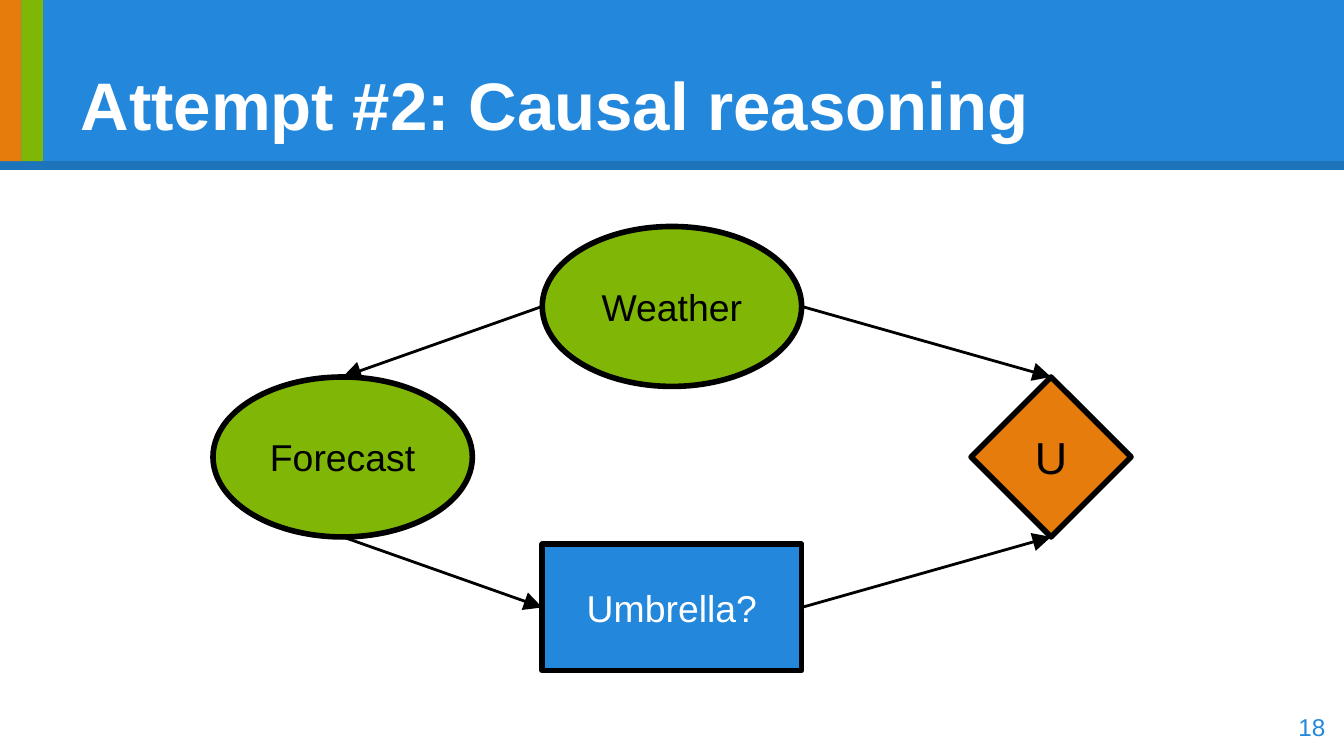
from lxml.etree import SubElement
from pptx import Presentation
from pptx.dml.color import RGBColor
from pptx.enum.shapes import MSO_CONNECTOR, MSO_SHAPE
from pptx.enum.text import MSO_ANCHOR, PP_ALIGN
from pptx.oxml.ns import qn
from pptx.util import Inches, Pt

BLUE = RGBColor(0x23, 0x88, 0xDB)
DARK_BLUE = RGBColor(0x1E, 0x74, 0xBA)
GREEN = RGBColor(0x80, 0xB6, 0x06)
ORANGE = RGBColor(0xE6, 0x7C, 0x0B)
BLACK = RGBColor(0, 0, 0)
WHITE = RGBColor(0xFF, 0xFF, 0xFF)

WIDTH = 10
HEIGHT = WIDTH * 9 / 16
HEADING = "Attempt #2: Causal reasoning"
PAGE_NUMBER = "18"
COLUMNS = {"left": 2.55, "middle": WIDTH / 2, "right": 7.82}
ROWS = {"top": 2.28, "centre": 3.4, "bottom": 4.52}
NODES = {
    "Weather": (MSO_SHAPE.OVAL, "middle", "top", 1.93, 1.19, GREEN, BLACK, 20),
    "U": (MSO_SHAPE.DIAMOND, "right", "centre", 1.19, 1.19, ORANGE, BLACK, 24),
    "Umbrella?": (MSO_SHAPE.RECTANGLE, "middle", "bottom", 1.93, 0.94, BLUE, WHITE, 20),
    "Forecast": (MSO_SHAPE.OVAL, "left", "centre", 1.93, 1.19, GREEN, BLACK, 20),
}
TOP, LEFT, BOTTOM, RIGHT = range(4)
ARROWS = [
    ("Weather", LEFT, "Forecast", TOP),
    ("Weather", RIGHT, "U", TOP),
    ("Forecast", BOTTOM, "Umbrella?", LEFT),
    ("Umbrella?", RIGHT, "U", BOTTOM),
]

deck = Presentation()
deck.slide_width, deck.slide_height = Inches(WIDTH), Inches(HEIGHT)
slide = deck.slides.add_slide(deck.slide_layouts[5])
shapes = slide.shapes


def box(left, top, width, height):
    return [Inches(value) for value in (left, top, width, height)]


def write(holder, text, size, color, align, anchor=MSO_ANCHOR.MIDDLE, bold=False):
    frame = holder.text_frame
    frame.word_wrap = True
    frame.vertical_anchor = anchor
    frame.margin_left = frame.margin_right = Inches(0.1)
    frame.margin_top = frame.margin_bottom = Inches(0.1)
    frame.text = text
    paragraph = frame.paragraphs[0]
    paragraph.alignment = align
    paragraph.font.name = "Arial"
    paragraph.font.size = Pt(size)
    paragraph.font.bold = bold
    paragraph.font.color.rgb = color


def add_filled(kind, area, fill, outlined=False):
    shape = shapes.add_shape(kind, *box(*area))
    shape.shadow.inherit = False
    shape.fill.solid()
    shape.fill.fore_color.rgb = fill
    if outlined:
        shape.line.color.rgb = BLACK
        shape.line.width = Pt(3)
    else:
        shape.line.fill.background()
    return shape


def add_line(start, end, color, width):
    line = shapes.add_connector(MSO_CONNECTOR.STRAIGHT, *start, *end)
    line.line.color.rgb = color
    line.line.width = Pt(width)
    SubElement(line._element.spPr, qn("a:effectLst"))
    return line


def side_point(node, side):
    across, down = [(1, 0), (0, 1), (1, 2), (2, 1)][side]
    return node.left + node.width * across // 2, node.top + node.height * down // 2


add_filled(MSO_SHAPE.RECTANGLE, (0, 0, WIDTH, 1.26), BLUE)
add_line((0, Inches(1.23)), (Inches(WIDTH), Inches(1.23)), DARK_BLUE, 4.5)
heading = shapes.title
heading.left, heading.top, heading.width, heading.height = box(0.5, 0.23, 9, 0.94)
write(heading, HEADING, 36, WHITE, PP_ALIGN.LEFT, MSO_ANCHOR.BOTTOM, True)
shapes._spTree.append(heading._element)

nodes = {}
for label, (kind, column, row, width, height, fill, ink, size) in NODES.items():
    area = (COLUMNS[column] - width / 2, ROWS[row] - height / 2, width, height)
    nodes[label] = add_filled(kind, area, fill, outlined=True)
    write(nodes[label], label, size, ink, PP_ALIGN.CENTER)

for source, source_side, target, target_side in ARROWS:
    cause, effect = nodes[source], nodes[target]
    arrow = add_line(side_point(cause, source_side), side_point(effect, target_side), BLACK, 1.5)
    SubElement(arrow.line._get_or_add_ln(), qn("a:tailEnd"), type="triangle", w="lg", len="lg")
    if NODES[source][0] != MSO_SHAPE.OVAL:
        arrow.begin_connect(cause, source_side)
    if NODES[target][0] != MSO_SHAPE.OVAL:
        arrow.end_connect(effect, target_side)

for index, stripe_color in enumerate([ORANGE, GREEN]):
    add_filled(MSO_SHAPE.RECTANGLE, (index * 0.16, 0, 0.16, 1.2), stripe_color)

page_number = shapes.add_textbox(*box(9.36, 5.19, 0.6, 0.43))
write(page_number, PAGE_NUMBER, 13, BLUE, PP_ALIGN.RIGHT)

deck.save("out.pptx")
